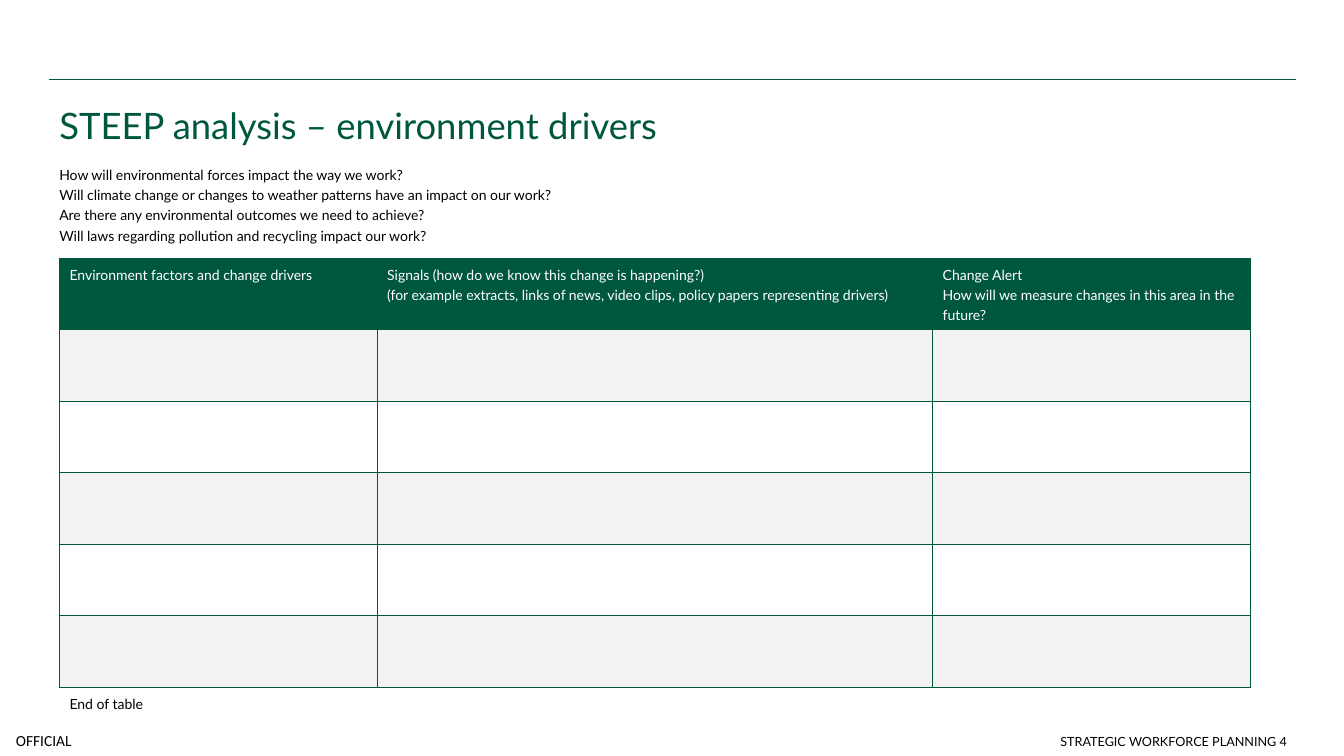
"""Build the STEEP analysis slide for environment drivers."""
import dataclasses

import lxml.etree
import pptx
import pptx.dml.color
import pptx.enum.shapes
import pptx.enum.text
import pptx.oxml.ns
import pptx.util

Inches = pptx.util.Inches
Pt = pptx.util.Pt
Align = pptx.enum.text.PP_ALIGN
Anchor = pptx.enum.text.MSO_ANCHOR
qn = pptx.oxml.ns.qn

COLOURS = {"green": "00573F", "band": "F2F2F2", "white": "FFFFFF", "black": "000000"}
COLUMN_WIDTHS = (3.15, 5.51, 3.15)
ROW_HEIGHT, END_ROW_HEIGHT = 0.71, 0.39
HEADINGS = (
    ("Environment factors and change drivers",),
    (
        "Signals (how do we know this change is happening?)",
        "(for example extracts, links of news, video clips, policy papers representing drivers)",
    ),
    ("Change Alert", "How will we measure changes in this area in the future?"),
)
ENTRY_ROWS = 5


@dataclasses.dataclass(frozen=True)
class Style:
    size: float
    colour: str = "black"
    font: str = "Lato"
    spacing: float = 1.2
    align: Align = Align.LEFT


@dataclasses.dataclass(frozen=True)
class TextBlock:
    left: float
    top: float
    width: float
    height: float
    lines: tuple[str, ...]
    style: Style
    anchor: Anchor = Anchor.TOP
    inset: bool = True


TEXT_BLOCKS = (
    TextBlock(0, 7.19, 0.87, 0.31, ("OFFICIAL",),
              Style(11, font="Calibri", spacing=1, align=Align.CENTER), Anchor.MIDDLE, False),
    TextBlock(0.49, 0.89, 12.36, 1.02, ("STEEP analysis – environment drivers",),
              Style(26, "green")),
    TextBlock(0.49, 1.57, 12.36, 0.98, (
        "How will environmental forces impact the way we work?",
        "Will climate change or changes to weather patterns have an impact on our work?",
        "Are there any environmental outcomes we need to achieve?",
        "Will laws regarding pollution and recycling impact our work?",
    ), Style(10)),
    TextBlock(6.84, 7.09, 6.02, 0.39, ("STRATEGIC WORKFORCE PLANNING 4",),
              Style(9, spacing=1, align=Align.RIGHT), Anchor.BOTTOM),
)


def rgb(name: str) -> pptx.dml.color.RGBColor:
    """Return the named palette colour."""
    return pptx.dml.color.RGBColor.from_string(COLOURS[name])


def write_lines(frame, lines: tuple[str, ...], style: Style) -> None:
    """Write one styled paragraph for each line."""
    for index, line in enumerate(lines):
        paragraph = frame.add_paragraph() if index else frame.paragraphs[0]
        paragraph.line_spacing = style.spacing
        paragraph.alignment = style.align
        run = paragraph.add_run()
        run.text = line
        run.font.size = Pt(style.size)
        run.font.name = style.font
        run.font.color.rgb = rgb(style.colour)


def draw_text(slide, block: TextBlock) -> None:
    """Draw a text block."""
    frame = slide.shapes.add_textbox(
        Inches(block.left), Inches(block.top), Inches(block.width), Inches(block.height)
    ).text_frame
    frame.word_wrap = True
    frame.vertical_anchor = block.anchor
    if not block.inset:
        frame.margin_left = frame.margin_right = frame.margin_top = frame.margin_bottom = 0
    write_lines(frame, block.lines, block.style)


def draw_rule(slide) -> None:
    """Draw the green rule above the title."""
    rule = slide.shapes.add_connector(
        pptx.enum.shapes.MSO_CONNECTOR.STRAIGHT,
        Inches(0.49), Inches(0.79), Inches(12.85), Inches(0.79),
    )
    rule.line.color.rgb = rgb("green")
    rule.line.width = Pt(1)
    lxml.etree.SubElement(rule._element.spPr, qn("a:effectLst"))


def set_borders(cell, visible_sides: str) -> None:
    """Give the visible sides a thin green line and the others none."""
    properties = cell._tc.get_or_add_tcPr()
    for side in "LRTB":
        border = lxml.etree.SubElement(properties, qn(f"a:ln{side}"), w=str(Pt(0.5)))
        if side in visible_sides:
            fill = lxml.etree.SubElement(border, qn("a:solidFill"))
            lxml.etree.SubElement(fill, qn("a:srgbClr"), val=COLOURS["green"])
        else:
            lxml.etree.SubElement(border, qn("a:noFill"))


def fill_cell(cell, lines: tuple[str, ...], fill: str, text: str, sides: str) -> None:
    """Set the borders, fill and text of a table cell."""
    set_borders(cell, sides)
    cell.fill.solid()
    cell.fill.fore_color.rgb = rgb(fill)
    if lines:
        write_lines(cell.text_frame, lines, Style(10, text))
    else:
        ending = lxml.etree.SubElement(cell.text_frame.paragraphs[0]._p, qn("a:endParaRPr"))
        ending.set("sz", "1000")


def draw_drivers_table(slide) -> None:
    """Draw the table of drivers, signals and alerts."""
    heights = [ROW_HEIGHT] * (ENTRY_ROWS + 1) + [END_ROW_HEIGHT]
    drivers = slide.shapes.add_table(
        len(heights), len(COLUMN_WIDTHS), Inches(0.59), Inches(2.56),
        Inches(sum(COLUMN_WIDTHS)), Inches(sum(heights)),
    ).table
    drivers.horz_banding = False
    for column, width in zip(drivers.columns, COLUMN_WIDTHS):
        column.width = Inches(width)
    for row, height in zip(drivers.rows, heights):
        row.height = Inches(height)

    end_row = len(heights) - 1
    for column, heading in enumerate(HEADINGS):
        fill_cell(drivers.cell(0, column), heading, "green", "white", "LRTB")
        for row in range(1, end_row):
            fill = "band" if row % 2 else "white"
            fill_cell(drivers.cell(row, column), (), fill, "black", "LRTB")
        closing = () if column else ("End of table",)
        fill_cell(drivers.cell(end_row, column), closing, "white", "black", "T")


def main() -> None:
    """Build and save the slide."""
    presentation = pptx.Presentation()
    presentation.slide_width = Inches(13.33)
    presentation.slide_height = Inches(7.5)
    slide = presentation.slides.add_slide(presentation.slide_layouts[6])
    draw_rule(slide)
    draw_drivers_table(slide)
    for block in TEXT_BLOCKS:
        draw_text(slide, block)
    presentation.save("out.pptx")


if __name__ == "__main__":
    main()
